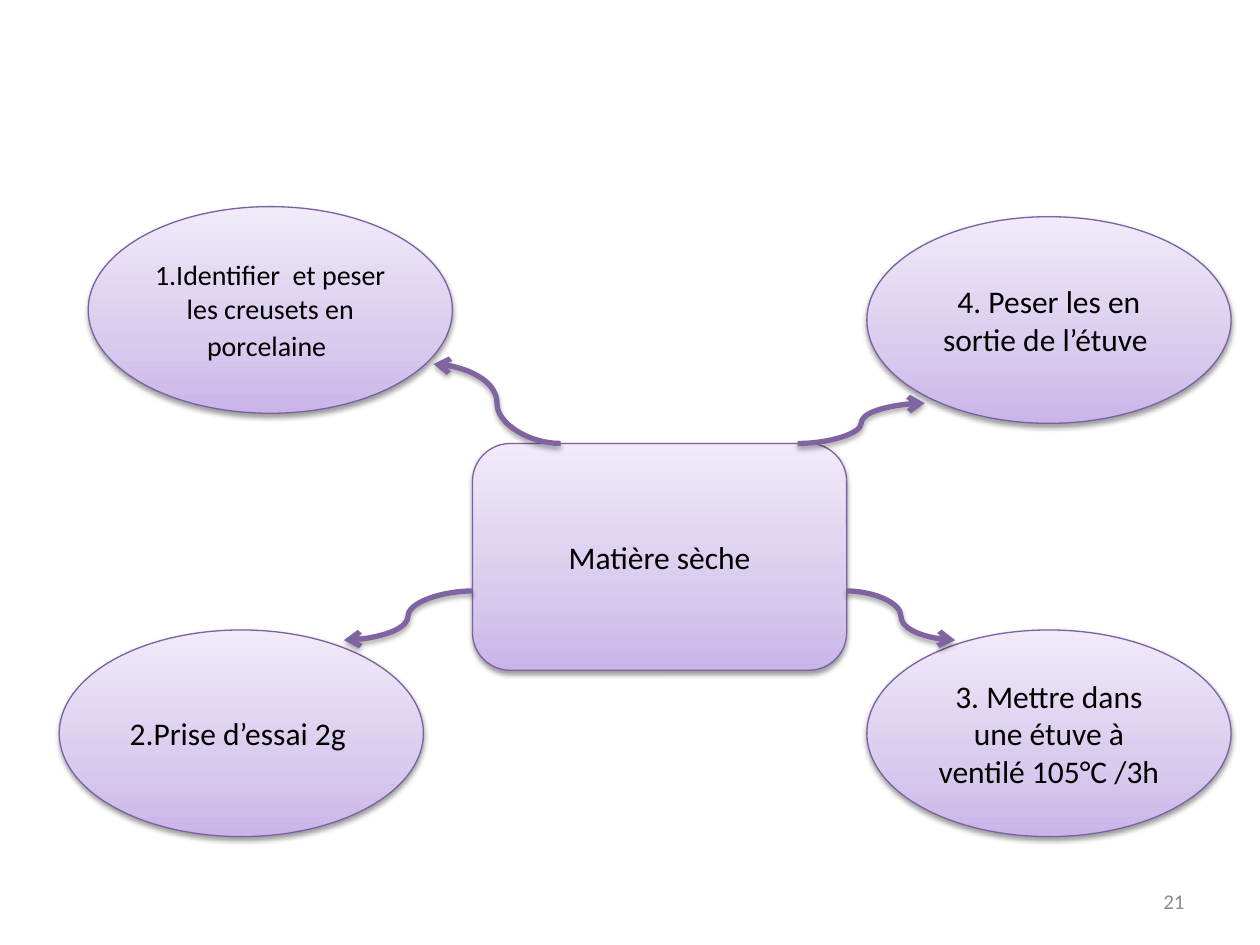
from lxml import etree
from pptx import Presentation
from pptx.dml.color import RGBColor
from pptx.enum.shapes import MSO_CONNECTOR, MSO_SHAPE
from pptx.enum.text import MSO_ANCHOR, PP_ALIGN
from pptx.oxml import parse_xml
from pptx.oxml.ns import nsdecls, qn
from pptx.util import Inches, Pt

BLACK = RGBColor(0x00, 0x00, 0x00)
GREY = RGBColor(0x8C, 0x8C, 0x8C)
OUTLINE = RGBColor(0x7D, 0x60, 0xA0)
ARROW = RGBColor(0x80, 0x64, 0xA2)
GRADIENT = [  # position, colour, from bottom to top
    (0, RGBColor(0xC9, 0xB5, 0xE8)),
    (0.35, RGBColor(0xD8, 0xCB, 0xEE)),
    (1, RGBColor(0xF0, 0xEA, 0xF9)),
]
FONT = "Calibri"

# Centre box and step ellipses, in inches
BOX_X, BOX_Y, BOX_W, BOX_H = 3.75, 3.52, 2.97, 1.8
STEP_W, STEP_H = 2.89, 1.64
RIGHT_X, LOWER_Y = 6.88, 5
TOPIC = [("Matière sèche", 18)]
STEPS = [  # left, top, runs as (text, size)
    (0.7, 1.64, [("1.Identifier  et peser les creusets en porcelaine", 16), (" ", 18)]),
    (RIGHT_X, 1.72, [("4. Peser les en sortie de l’étuve ", 18)]),
    (0.47, LOWER_Y, [("2.Prise d’essai 2g ", 18)]),
    (RIGHT_X, LOWER_Y, [("3. Mettre dans une étuve à ventilé 105°C /3h", 18)]),
]
SIDE_Y, LOWER_END_Y = 4.69, 5.08
ARROWS = [  # start, end
    ((4.45, BOX_Y), (3.44, 2.89)),
    ((BOX_X + BOX_W, SIDE_Y), (7.58, LOWER_END_Y)),
    ((6.33, BOX_Y), (7.34, 3.2)),
    ((BOX_X, SIDE_Y), (2.73, LOWER_END_Y)),
]
PAGE = [("21", 12)]


def add_shadow(s, distance, opacity):
    """Append a soft downward shadow; call after the line is set."""
    s._element.spPr.append(parse_xml(
        f'<a:effectLst {nsdecls("a")}><a:outerShdw blurRad="{Pt(3.1)}" '
        f'dist="{Pt(distance)}" dir="5400000" rotWithShape="0">'
        f'<a:srgbClr val="000000"><a:alpha val="{opacity * 1000}"/></a:srgbClr>'
        '</a:outerShdw></a:effectLst>'))


def write(s, runs, align, color):
    tf = s.text_frame
    tf.word_wrap = True
    tf.vertical_anchor = MSO_ANCHOR.MIDDLE
    p = tf.paragraphs[0]
    p.alignment = align
    for text, size in runs:
        r = p.add_run()
        r.text = text
        r.font.name, r.font.size = FONT, Pt(size)
        r.font.color.rgb = color


def fill_gradient(s):
    s.fill.gradient()
    s.fill.gradient_angle = 90
    stops = s._element.spPr.find(".//" + qn("a:gsLst"))
    for stop in list(stops):
        stops.remove(stop)
    for position, color in GRADIENT:
        stop = etree.SubElement(stops, qn("a:gs"), pos=str(int(position * 100000)))
        etree.SubElement(stop, qn("a:srgbClr"), val=str(color))


def add_node(shapes, kind, x, y, w, h, runs):
    s = shapes.add_shape(kind, Inches(x), Inches(y), Inches(w), Inches(h))
    fill_gradient(s)
    s.line.color.rgb = OUTLINE
    s.line.width = Pt(0.75)
    add_shadow(s, 1.6, 38)
    write(s, runs, PP_ALIGN.CENTER, BLACK)


def add_arrow(shapes, start, end):
    c = shapes.add_connector(MSO_CONNECTOR.CURVE, *map(Inches, start + end))
    c.line.color.rgb = ARROW
    c.line.width = Pt(3)
    etree.SubElement(c.line._get_or_add_ln(), qn("a:tailEnd"), type="arrow")
    add_shadow(c, 1.8, 35)


def main():
    prs = Presentation()
    prs.slide_width, prs.slide_height = Inches(10), Inches(7.5)
    shapes = prs.slides.add_slide(prs.slide_layouts[6]).shapes

    add_node(shapes, MSO_SHAPE.ROUNDED_RECTANGLE, BOX_X, BOX_Y, BOX_W, BOX_H, TOPIC)
    for x, y, runs in STEPS:
        add_node(shapes, MSO_SHAPE.OVAL, x, y, STEP_W, STEP_H, runs)
    for start, end in ARROWS:
        add_arrow(shapes, start, end)

    page = shapes.add_textbox(Inches(7.17), Inches(6.95), Inches(2.33), Inches(0.4))
    write(page, PAGE, PP_ALIGN.RIGHT, GREY)
    prs.save("out.pptx")


if __name__ == "__main__":
    main()
